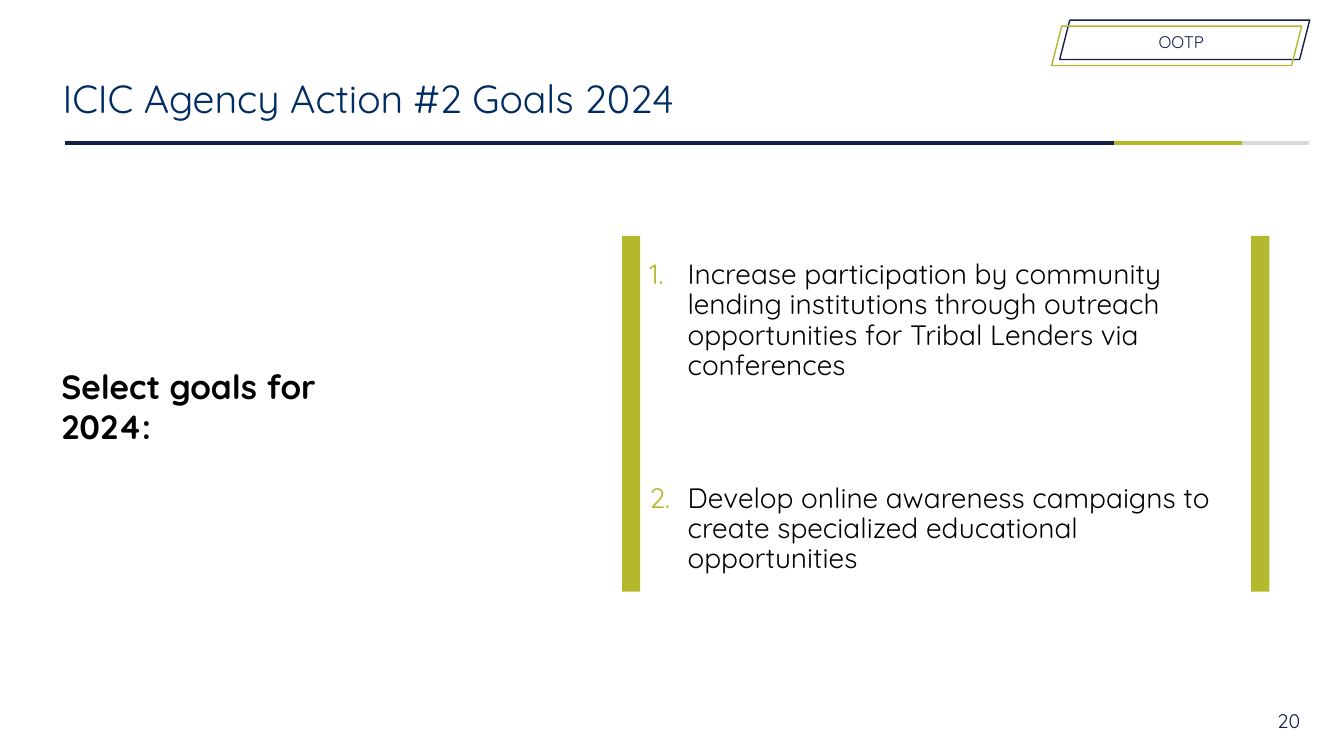
from dataclasses import dataclass

from lxml import etree
from pptx import Presentation
from pptx import util as u
from pptx.dml.color import RGBColor
from pptx.enum import shapes, text
from pptx.oxml.ns import qn
from pptx.shapes.autoshape import Shape
from pptx.slide import Slide

FONT = "Quicksand"
COLORS = {
    "navy": "131F46",
    "blue": "002D61",
    "olive": "B3B82C",
    "grey": "D9D9D9",
    "black": "000000",
}


@dataclass
class Span:
    text: str
    color: str


@dataclass
class Label:
    left: float
    top: float
    width: float
    height: float
    size: int
    spans: list[Span]
    bold: bool = False
    inset: float = 0.01
    before: float = 1
    line: float | None = None
    hanging: float = 0


@dataclass
class RuleSegment:
    start: float
    end: float
    color: str


@dataclass
class TagFrame:
    left: float
    top: float
    color: str


def goal(number: int, top: float, height: float, wording: str) -> Label:
    """A numbered goal with a hanging indent."""
    spans = [Span(f"{number}.\t", "olive"), Span(wording, "black")]
    return Label(6.43, top, 5.6, height, 20, spans, inset=0.05,
                 before=3.6, line=21.6, hanging=0.38)


RULE_TOP = 1.42
RULE = [
    RuleSegment(0.64, 11.05, "navy"),
    RuleSegment(11.05, 12.32, "olive"),
    RuleSegment(12.32, 12.98, "grey"),
]
BAR_LEFTS = [6.17, 12.41]
TAG_FRAMES = [TagFrame(10.51, 0.2, "navy"), TagFrame(10.43, 0.26, "olive")]
TAG_WIDTH, TAG_HEIGHT, TAG_SLANT = 2.48, 0.39, 0.1

LABELS = [
    goal(1, 2.53, 1.26, "Increase participation by community lending institutions "
                        "through outreach opportunities for Tribal Lenders via conferences"),
    goal(2, 4.75, 0.96, "Develop online awareness campaigns to create specialized "
                        "educational opportunities"),
    Label(0.62, 0.73, 6.59, 0.5, 28, [Span("ICIC Agency Action #2 Goals 2024", "blue")]),
    Label(0.61, 3.62, 3.43, 0.43, 24, [Span("Select goals for 2024:", "black")], bold=True),
    Label(12.67, 7.02, 0.24, 0.26, 14, [Span("20", "navy")]),
    Label(11.49, 0.31, 0.48, 0.23, 12, [Span("OOTP", "navy")]),
]


def rgb(name: str) -> RGBColor:
    return RGBColor.from_string(COLORS[name])


def add_rule_segment(s: Slide, seg: RuleSegment) -> None:
    y = u.Inches(RULE_TOP)
    sp = s.shapes.add_connector(shapes.MSO_CONNECTOR.STRAIGHT,
                                u.Inches(seg.start), y, u.Inches(seg.end), y)
    sp.line.color.rgb = rgb(seg.color)
    sp.line.width = u.Pt(2.5)
    etree.SubElement(sp._element.spPr, qn("a:effectLst"))


def add_bar(s: Slide, left: float) -> None:
    sp = s.shapes.add_shape(shapes.MSO_SHAPE.RECTANGLE, u.Inches(left), u.Inches(2.34),
                            u.Inches(0.18), u.Inches(3.53))
    sp.shadow.inherit = False
    sp.fill.solid()
    sp.fill.fore_color.rgb = rgb("olive")
    sp.line.fill.background()


def add_tag_frame(s: Slide, frame: TagFrame) -> None:
    sp = s.shapes.add_shape(shapes.MSO_SHAPE.PARALLELOGRAM, u.Inches(frame.left),
                            u.Inches(frame.top), u.Inches(TAG_WIDTH), u.Inches(TAG_HEIGHT))
    sp.adjustments[0] = TAG_SLANT / TAG_HEIGHT
    sp.shadow.inherit = False
    sp.fill.background()
    sp.line.color.rgb = rgb(frame.color)
    sp.line.width = u.Pt(1)


def add_label(s: Slide, label: Label) -> Shape:
    sp = s.shapes.add_textbox(u.Inches(label.left), u.Inches(label.top),
                              u.Inches(label.width), u.Inches(label.height))
    tf = sp.text_frame
    tf.word_wrap = True
    tf.auto_size = text.MSO_AUTO_SIZE.SHAPE_TO_FIT_TEXT
    tf.margin_left = tf.margin_right = tf.margin_bottom = 0
    tf.margin_top = u.Inches(label.inset)
    p = tf.paragraphs[0]
    p.space_before = u.Pt(label.before)
    if label.line:
        p.line_spacing = u.Pt(label.line)
    if label.hanging:
        pPr = p._p.get_or_add_pPr()
        pPr.set("marL", str(u.Inches(label.hanging + 0.01)))
        pPr.set("indent", str(-u.Inches(label.hanging)))
    for span in label.spans:
        r = p.add_run()
        r.text = span.text
        r.font.name = FONT
        r.font.size = u.Pt(label.size)
        r.font.bold = label.bold
        r.font.color.rgb = rgb(span.color)
    return sp


def main() -> None:
    prs = Presentation()
    prs.slide_width, prs.slide_height = u.Inches(13.33), u.Inches(7.5)
    s = prs.slides.add_slide(prs.slide_layouts[6])
    for seg in RULE:
        add_rule_segment(s, seg)
    for left in BAR_LEFTS:
        add_bar(s, left)
    for frame in TAG_FRAMES:
        add_tag_frame(s, frame)
    for label in LABELS:
        add_label(s, label)
    prs.save("out.pptx")


if __name__ == "__main__":
    main()
